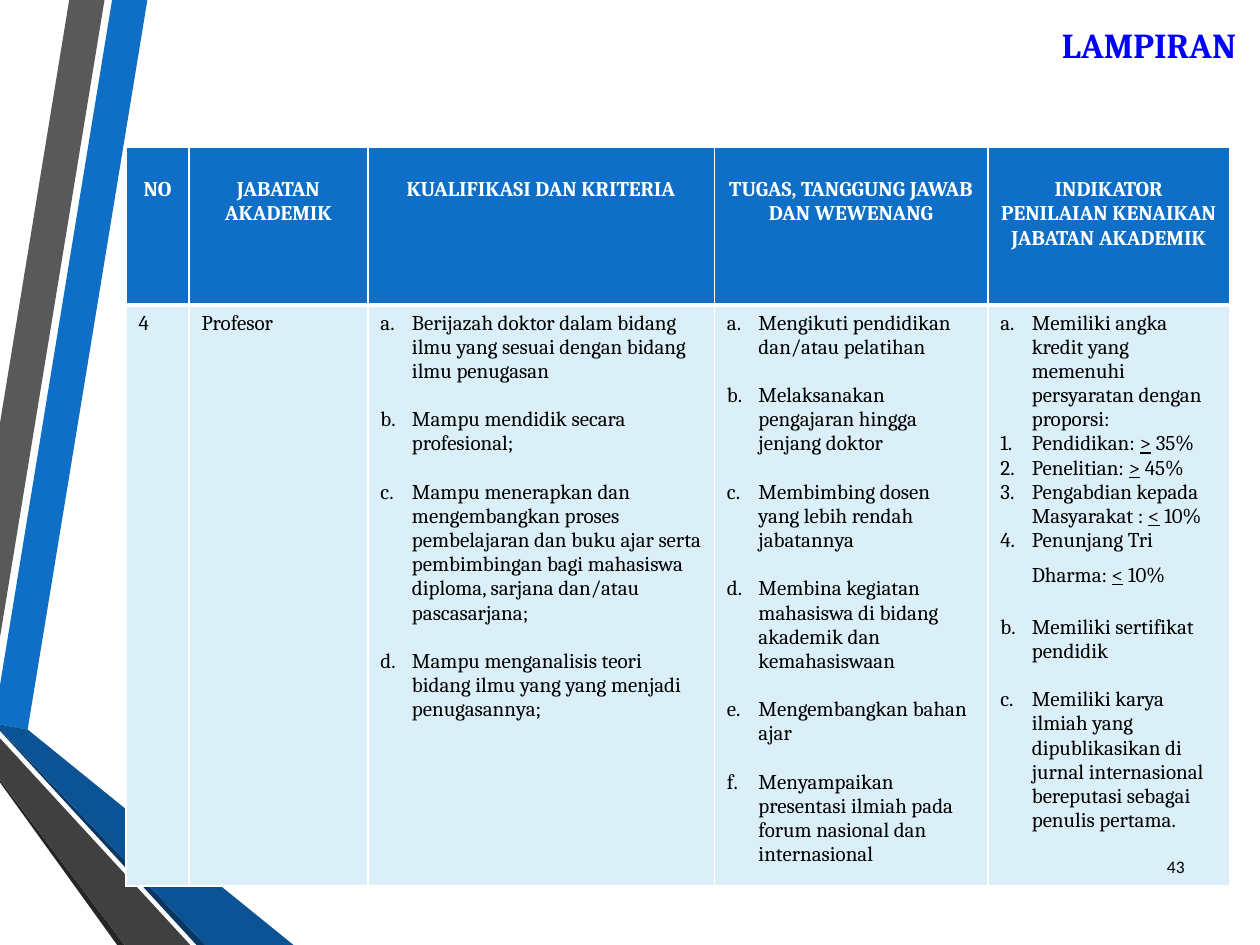
from lxml.etree import SubElement
from pptx import Presentation
from pptx.dml.color import RGBColor
from pptx.enum.text import MSO_ANCHOR as Anchor, PP_ALIGN as Align
from pptx.oxml.ns import qn
from pptx.util import Inches, Pt

WHITE = RGBColor(0xFF, 0xFF, 0xFF)
BLACK = RGBColor(0, 0, 0)
TITLE_BLUE = RGBColor(0, 0, 0xFF)
HEADER_BLUE = RGBColor(0x0F, 0x6F, 0xC6)
BODY_BLUE = RGBColor(0xDB, 0xEF, 0xF9)
FOLD_BLUE = RGBColor(0x0B, 0x53, 0x94)
DARK_BLUE = RGBColor(0x08, 0x37, 0x63)
GREY = RGBColor(0x59, 0x59, 0x59)
DARK_GREY = RGBColor(0x40, 0x40, 0x40)
EDGE_GREY = RGBColor(0x26, 0x26, 0x26)

LINE_GAP = Pt(13.8)
LETTERS, NUMBERS = "alphaLcPeriod", "arabicPeriod"

RIBBONS = [
    (HEADER_BLUE, [(0, 5.44), (0, 5.75), (0.22, 5.79), (1.17, 0), (0.89, 0)]),
    (GREY, [(0.83, 0), (0.55, 0), (0, 3.36), (0, 5.06)]),
    (EDGE_GREY, [(0, 6.19), (0, 6.21), (0.93, 7.5), (0.99, 7.5)]),
    (DARK_BLUE, [(0, 5.79), (0, 5.8), (1.56, 7.5), (1.63, 7.5)]),
    (FOLD_BLUE, [(0, 5.79), (1.63, 7.5), (2.33, 7.5), (0.22, 5.79), (0, 5.75)]),
    (DARK_GREY, [(0, 6.19), (0.99, 7.5), (1.51, 7.5), (0, 5.86)]),
]

COLUMNS = [
    ("NO", 0.5),
    ("JABATAN AKADEMIK", 1.42),
    ("KUALIFIKASI DAN KRITERIA", 2.75),
    ("TUGAS, TANGGUNG JAWAB DAN WEWENANG", 2.17),
    ("INDIKATOR PENILAIAN KENAIKAN JABATAN AKADEMIK", 1.92),
]
ROW_HEIGHTS = [1.25, 4.61]

CRITERIA = [
    "Berijazah doktor dalam bidang ilmu yang sesuai dengan bidang ilmu penugasan",
    "Mampu mendidik secara profesional;",
    "Mampu menerapkan dan mengembangkan proses pembelajaran dan buku ajar serta "
    "pembimbingan bagi mahasiswa diploma, sarjana dan/atau pascasarjana;",
    "Mampu menganalisis teori bidang ilmu yang yang menjadi penugasannya;",
]
DUTIES = [
    "Mengikuti pendidikan dan/atau pelatihan",
    "Melaksanakan pengajaran hingga jenjang doktor",
    "Membimbing dosen yang lebih rendah jabatannya",
    "Membina kegiatan mahasiswa di bidang akademik dan kemahasiswaan",
    "Mengembangkan bahan ajar",
    "Menyampaikan presentasi ilmiah pada forum nasional dan internasional",
]
CREDIT_RULE = "Memiliki angka kredit yang memenuhi persyaratan dengan proporsi:"
CREDIT_SHARES = [
    ("Pendidikan: ", ">", " 35%"),
    ("Penelitian: ", ">", " 45%"),
    ("Pengabdian kepada Masyarakat : ", "<", " 10%"),
    ("Penunjang Tri Dharma: ", "<", " 10%"),
]
OTHER_INDICATORS = [
    "Memiliki sertifikat pendidik",
    "Memiliki karya ilmiah yang dipublikasikan di jurnal internasional "
    "bereputasi sebagai penulis pertama.",
]


def add_run(paragraph, text, color=BLACK, **formats):
    run = paragraph.add_run()
    run.text = text
    run.font.color.rgb = color
    for key, value in ({"name": "Cambria", "size": Pt(12), "bold": False} | formats).items():
        setattr(run.font, key, value)


def add_ribbon(slide, color, corners):
    points = [(Inches(x), Inches(y)) for x, y in corners]
    builder = slide.shapes.build_freeform(*points[0])
    builder.add_line_segments(points[1:], close=True)
    ribbon = builder.convert_to_shape()
    ribbon.shadow.inherit = False
    ribbon.fill.solid()
    ribbon.fill.fore_color.rgb = color
    ribbon.line.fill.background()


def add_label(slide, box, text, anchor, color, **formats):
    label = slide.shapes.add_textbox(*map(Inches, box))
    label.text_frame.word_wrap = True
    label.text_frame.vertical_anchor = anchor
    paragraph = label.text_frame.paragraphs[0]
    paragraph.alignment = Align.RIGHT
    add_run(paragraph, text, color, **formats)


def style_cell(cell, color, borders):
    """Give the cell white borders, in points by side, and then its fill."""
    properties = cell._tc.get_or_add_tcPr()
    for side, width in borders.items():
        border = SubElement(properties, qn(f"a:ln{side}"), w=str(Pt(width)))
        fill = SubElement(border, qn("a:solidFill"))
        SubElement(fill, qn("a:srgbClr"), val=str(WHITE))
    cell.fill.solid()
    cell.fill.fore_color.rgb = color


def add_list_item(cell, parts, scheme=LETTERS, start=1, gap=0):
    """Append a numbered paragraph; every second part is underlined."""
    paragraph = cell.text_frame.paragraphs[0]
    if paragraph.runs:
        paragraph = cell.text_frame.add_paragraph()
    paragraph.space_before = gap
    properties = paragraph._p.get_or_add_pPr()
    properties.set("marL", str(Inches(0.25)))
    properties.set("indent", str(Inches(-0.25)))
    numbering = SubElement(properties, qn("a:buAutoNum"), type=scheme)
    if start > 1:
        numbering.set("startAt", str(start))
    for index, part in enumerate(parts):
        add_run(paragraph, part, underline=index % 2 == 1)
    return paragraph


def add_lettered_list(cell, items):
    for index, item in enumerate(items):
        add_list_item(cell, [item], gap=LINE_GAP if index else 0)


def fill_indicators(cell):
    add_list_item(cell, [CREDIT_RULE])
    for share in CREDIT_SHARES:
        last_share = add_list_item(cell, share, NUMBERS)
    # The larger closing space makes the last line of the shares taller.
    add_run(last_share, " ", name="Calibri", size=Pt(18))
    for item in OTHER_INDICATORS:
        add_list_item(cell, [item], start=2, gap=LINE_GAP)


def add_rank_table(slide):
    width = sum(column_width for _, column_width in COLUMNS)
    frame = slide.shapes.add_table(2, len(COLUMNS), Inches(1), Inches(1.17),
                                   Inches(width), Inches(sum(ROW_HEIGHTS)))
    table = frame.table
    table.horz_banding = False
    for row, height in zip(table.rows, ROW_HEIGHTS):
        row.height = Inches(height)
    for index, (heading, column_width) in enumerate(COLUMNS):
        table.columns[index].width = Inches(column_width)
        header, body = table.cell(0, index), table.cell(1, index)
        style_cell(header, HEADER_BLUE, {"L": 1, "R": 1, "T": 1, "B": 3})
        style_cell(body, BODY_BLUE, {"L": 1, "R": 1, "B": 1})
        header.margin_top = Inches(0.05) + LINE_GAP
        paragraph = header.text_frame.paragraphs[0]
        paragraph.alignment = Align.CENTER
        add_run(paragraph, heading, WHITE, bold=True)

    number, rank, criteria, duties, indicators = table.rows[1].cells
    add_run(number.text_frame.paragraphs[0], "4")
    add_run(rank.text_frame.paragraphs[0], "Profesor")
    add_lettered_list(criteria, CRITERIA)
    add_lettered_list(duties, DUTIES)
    fill_indicators(indicators)


def main():
    deck = Presentation()
    deck.slide_width, deck.slide_height = Inches(10), Inches(7.5)
    slide = deck.slides.add_slide(deck.slide_layouts[6])
    for color, corners in RIBBONS:
        add_ribbon(slide, color, corners)
    add_rank_table(slide)
    add_label(slide, (9.03, 6.68, 0.47, 0.4), "43", Anchor.MIDDLE, BLACK,
              name="Calibri", size=Pt(10))
    add_label(slide, (2.58, 0.14, 7.33, 0.44), "LAMPIRAN", Anchor.TOP, TITLE_BLUE,
              size=Pt(20), bold=True)
    deck.save("out.pptx")


if __name__ == "__main__":
    main()
